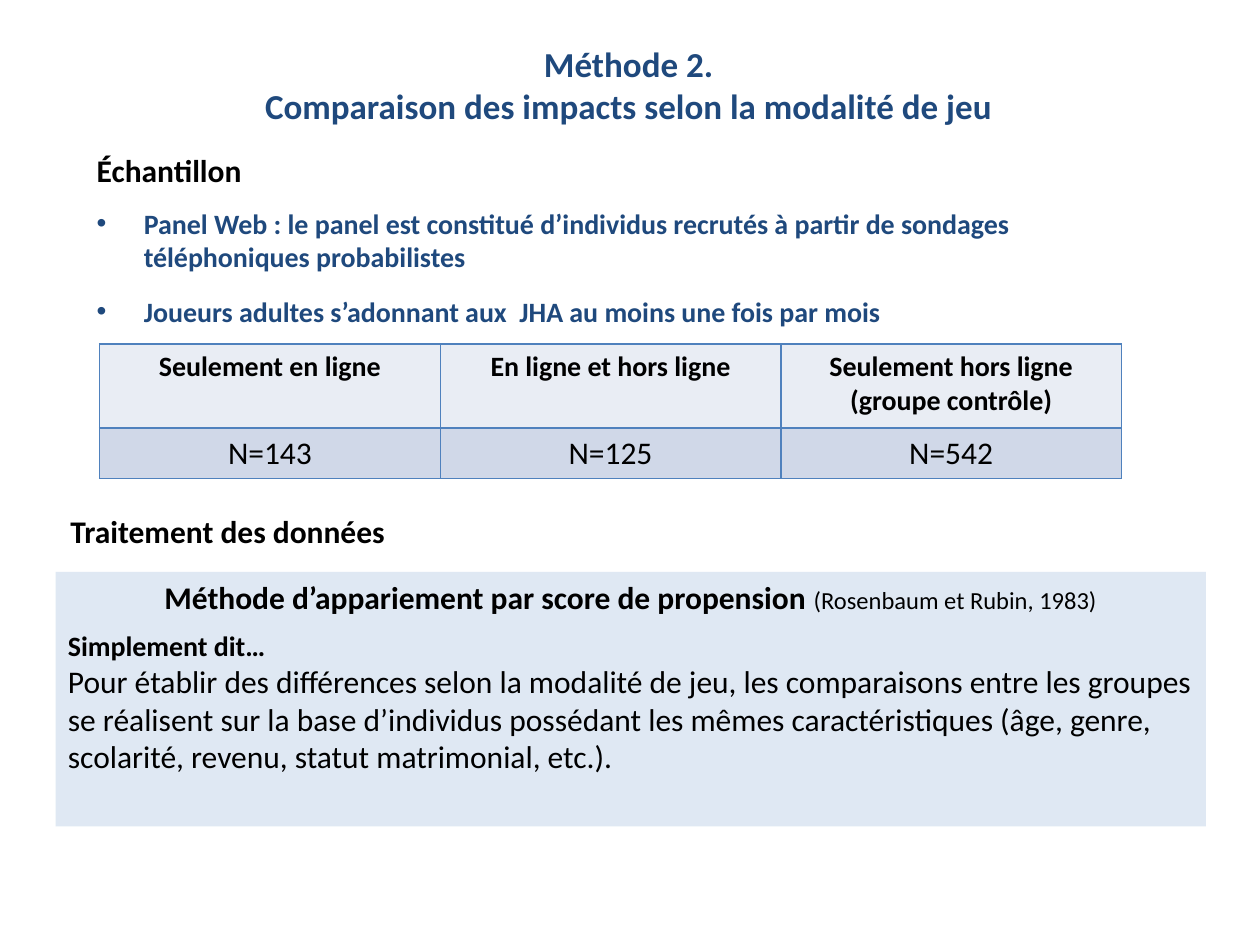
from lxml import etree
from pptx import Presentation
from pptx import util as u
from pptx.dml.color import RGBColor
from pptx.enum import shapes, text
from pptx.oxml import ns

BLACK, NAVY, BLUE = "000000", "1F497D", "4F81BD"
PANEL_FILL, HEADER_FILL, COUNT_FILL = "DCE6F2", "E9EDF4", "D0D8E8"
CENTER = text.PP_ALIGN.CENTER


def color(value):
    return RGBColor.from_string(value)


def set_fill(target, value):
    target.fill.solid()
    target.fill.fore_color.rgb = color(value)


def add_child(parent, tag, **attributes):
    return etree.SubElement(parent, ns.qn(tag), attributes)


def write(frame, lines):
    """Each line holds its spans (words, size, bold, colour) and paragraph formats."""
    frame.word_wrap = True
    paras = []
    for index, (spans, formats) in enumerate(lines):
        para = frame.add_paragraph() if index else frame.paragraphs[0]
        for name, value in formats.items():
            setattr(para, name, value)
        for words, size, bold, ink in spans:
            span = para.add_run()
            span.text = words
            font_formats = {"name": "Calibri", "size": u.Pt(size), "bold": bold}
            for name, value in font_formats.items():
                setattr(span.font, name, value)
            span.font.color.rgb = color(ink)
        paras.append(para)
    return paras


def add_text(page, box, lines):
    area = page.shapes.add_textbox(*map(u.Cm, box))
    return write(area.text_frame, lines)


def add_bullet(para, indent):
    props = para._p.get_or_add_pPr()
    props.set("marL", str(indent))
    props.set("indent", str(-indent))
    add_child(props, "a:buFont", typeface="Arial")
    add_child(props, "a:buChar", char="•")


def add_borders(cell, value):
    props = cell._tc.get_or_add_tcPr()
    for position, side in enumerate(("a:lnL", "a:lnR", "a:lnT", "a:lnB")):
        line = etree.Element(ns.qn(side), w=str(u.Pt(1)))
        add_child(add_child(line, "a:solidFill"), "a:srgbClr", val=value)
        props.insert(position, line)


def add_title(page, box):
    lines = ("Méthode 2.", "Comparaison des impacts selon la modalité de jeu")
    add_text(page, box, [([(line, 20, True, NAVY)], {"alignment": CENTER}) for line in lines])


def add_sample(page, box):
    bullets = (
        "Panel Web : le panel est constitué d’individus recrutés à partir de sondages "
        "téléphoniques probabilistes",
        "Joueurs adultes s’adonnant aux  JHA au moins une fois par mois",
    )
    lines = [([("Échantillon", 18, True, BLACK)], {"space_after": u.Pt(10)})]
    lines += [([(words, 16, True, NAVY)], {"space_after": u.Pt(12)}) for words in bullets]
    for para in add_text(page, box, lines)[1:]:
        add_bullet(para, u.Cm(0.95))


def add_groups(page, box):
    left, top, width, height = map(u.Cm, box)
    groups = (
        (["Seulement en ligne"], "N=143"),
        (["En ligne et hors ligne"], "N=125"),
        (["Seulement hors ligne", "(groupe contrôle)"], "N=542"),
    )
    table = page.shapes.add_table(2, len(groups), left, top, width, height).table
    table.rows[0].height = u.Cm(1.7)
    table.rows[1].height = height - u.Cm(1.7)
    for column, (names, count) in enumerate(groups):
        table.columns[column].width = width // len(groups)
        contents = ((names, 16, True, HEADER_FILL), ([count], 18, False, COUNT_FILL))
        for row, (words, size, bold, shade) in enumerate(contents):
            cell = table.cell(row, column)
            write(cell.text_frame, [([(line, size, bold, BLACK)], {"alignment": CENTER})
                                    for line in words])
            set_fill(cell, shade)
            add_borders(cell, BLUE)


def add_processing(page, box):
    left, top, width, height = box
    # Heading just above the panel
    add_text(page, (left + 0.05, top - 1.34, 7.9, 1.02),
             [([("Traitement des données", 18, True, BLACK)], {})])
    # Tinted panel
    panel = page.shapes.add_shape(shapes.MSO_SHAPE.RECTANGLE, *map(u.Cm, box))
    panel.shadow.inherit = False
    panel.line.fill.background()
    set_fill(panel, PANEL_FILL)
    tint = panel._element.spPr.find(ns.qn("a:solidFill"))[0]
    add_child(tint, "a:alpha", val="90000")
    panel.text_frame.vertical_anchor = text.MSO_ANCHOR.TOP
    start = {"alignment": text.PP_ALIGN.LEFT}
    write(panel.text_frame, [
        ([("Méthode d’appariement par score de propension ", 18, True, BLACK),
          ("(Rosenbaum et Rubin, 1983)", 14, False, BLACK)],
         {"alignment": CENTER, "space_after": u.Pt(7)}),
        ([("Simplement dit…", 16, True, BLACK)], start),
        ([("Pour établir des différences selon la modalité de jeu, les comparaisons entre "
           "les groupes se réalisent sur la base d’individus possédant les mêmes "
           "caractéristiques (âge, genre, scolarité, revenu, statut matrimonial, etc.).",
           18, False, BLACK)], start),
    ])


def main():
    deck = Presentation()
    deck.slide_width, deck.slide_height = u.Cm(25.4), u.Cm(19.05)
    page = deck.slides.add_slide(deck.slide_layouts[6])
    add_processing(page, (1.12, 11.53, 23.19, 5.13))
    add_sample(page, (1.7, 2.92, 22.17, 4.39))
    add_title(page, (5.08, 0.74, 15.19, 1.96))
    add_groups(page, (2.01, 6.93, 20.6, 2.72))
    deck.save("out.pptx")


if __name__ == "__main__":
    main()
